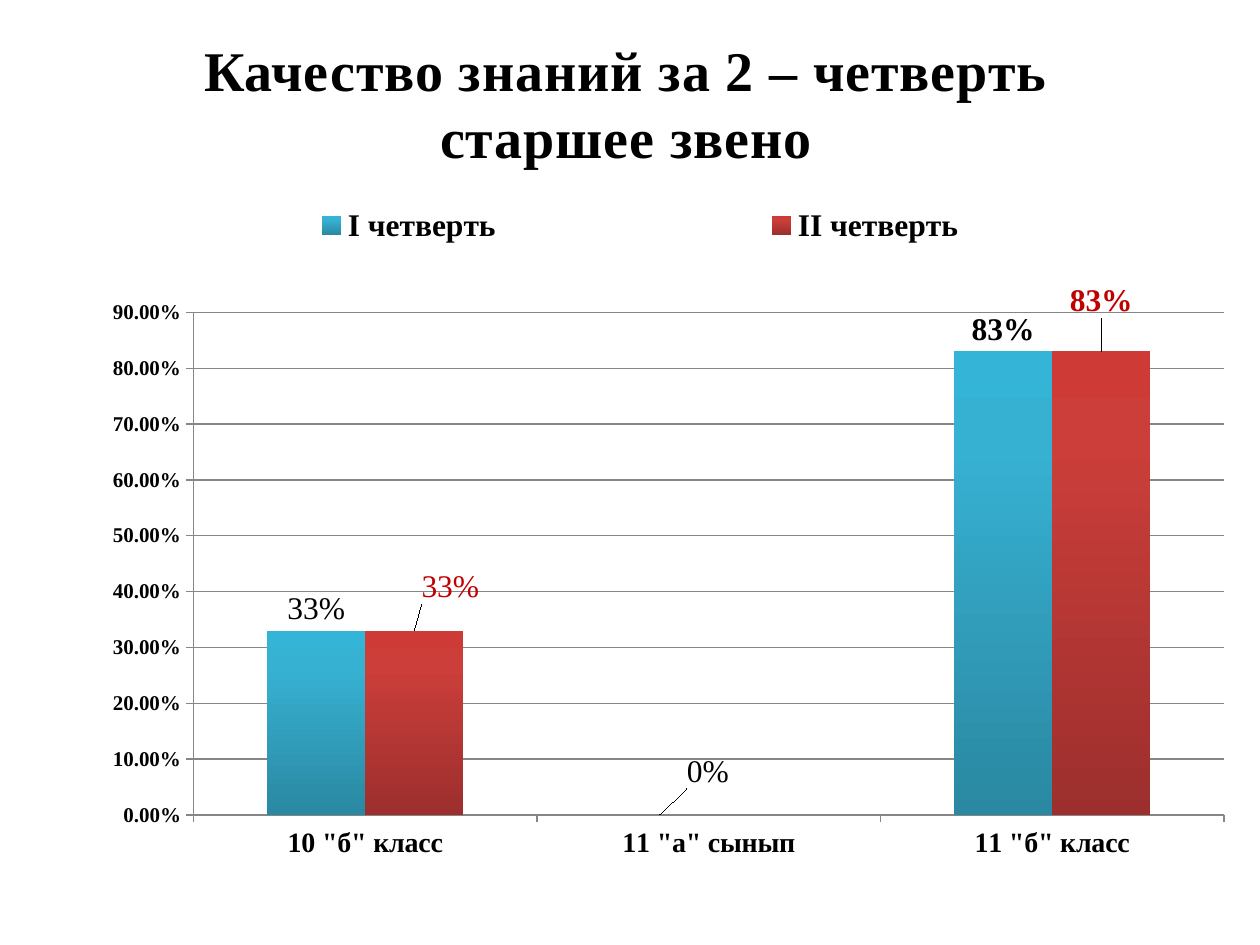
from copy import deepcopy
from dataclasses import dataclass

from pptx import Presentation
from pptx.chart.data import CategoryChartData
from pptx.dml.color import RGBColor
from pptx.enum import chart as ch, text
from pptx.oxml import parse_xml
from pptx.oxml.ns import nsdecls, qn
from pptx.util import Inches, Pt


@dataclass(frozen=True)
class Theme:
    font: str = "Times New Roman"
    ink: str = "000000"
    red: str = "C00000"
    grid: str = "868686"
    blues: tuple = ("2A88A2", "37B1D2", "34B4D6")
    reds: tuple = ("9C2F2D", "CB3E3A", "CE3B37")
    title: int = 32
    label: int = 18
    cat: int = 16
    val: int = 12


T = Theme()


def style(font, size, color=T.ink, bold=True):
    font.name, font.size, font.bold = T.font, Pt(size), bold
    font.color.rgb = RGBColor.from_string(color)


def layout(x, y, w=None, h=None, inner=False):
    """Manual layout: an offset for a label, a box when w and h are given."""
    parts = [("layoutTarget", "inner")] if inner else []
    if w:
        parts += [("xMode", "edge"), ("yMode", "edge")]
    parts += [("x", x), ("y", y)]
    if w:
        parts += [("w", w), ("h", h)]
    body = "".join(f'<c:{k} val="{v}"/>' for k, v in parts)
    return parse_xml(f'<c:layout {nsdecls("c")}><c:manualLayout>{body}'
                     "</c:manualLayout></c:layout>")


def put_layout(node, item, after=None):
    for old in node.findall(qn("c:layout")):
        node.remove(old)
    if after is None:
        node.insert(0, item)
    else:
        node.find(qn(after)).addnext(item)


def shade(fill, colors):
    """Three-stop gradient, darkest at the bottom."""
    fill.gradient()
    fill.gradient_angle = 90
    first = fill.gradient_stops[0]._gs
    first.addnext(deepcopy(first))
    for stop, pos, color in zip(fill.gradient_stops, (0, 0.8, 1), colors):
        stop.position = pos
        stop.color.rgb = RGBColor.from_string(color)


def add_title(slide, x, y, w, h):
    frame = slide.shapes.add_textbox(x, y, w, h).text_frame
    frame.word_wrap = True
    para = frame.paragraphs[0]
    para.text = "Качество знаний за 2 – четверть\vстаршее звено"
    para.alignment = text.PP_ALIGN.CENTER
    for run in para.runs:
        style(run.font, T.title)
        run._r.get_or_add_rPr().set("spc", "50")


def add_axes(chart):
    cat, val = chart.category_axis, chart.value_axis
    for axis, size in ((cat, T.cat), (val, T.val)):
        style(axis.tick_labels.font, size)
        axis.major_tick_mark = ch.XL_TICK_MARK.OUTSIDE
        axis.format.line.color.rgb = RGBColor.from_string(T.grid)
    val.minimum_scale, val.maximum_scale, val.major_unit = 0, 0.9, 0.1
    val.tick_labels.number_format = "0.00%"
    val.tick_labels.number_format_is_linked = False
    val.has_major_gridlines = True
    val.major_gridlines.format.line.color.rgb = RGBColor.from_string(T.grid)


def add_labels(series, color, spots):
    """Spots: point index -> (x shift, y shift, bold), or None to hide."""
    labels = series.data_labels
    labels.show_value = True
    labels.number_format, labels.number_format_is_linked = "0%", False
    labels.position = ch.XL_LABEL_POSITION.OUTSIDE_END
    style(labels.font, T.label, color)
    for i, spot in spots.items():
        label = series.points[i].data_label
        style(label.font, T.label, color, bool(spot and spot[2]))
        label.position = ch.XL_LABEL_POSITION.OUTSIDE_END
        node = next(d for d in labels._element.findall(qn("c:dLbl"))
                    if d.find(qn("c:idx")).get("val") == str(i))
        if spot:
            put_layout(node, layout(*spot[:2]), "c:idx")
        else:
            for part in list(node)[1:]:
                node.remove(part)
            node.append(parse_xml(f'<c:delete {nsdecls("c")} val="1"/>'))


def add_bars(slide, x, y, w, h):
    data = CategoryChartData(number_format="0%")
    data.categories = ['10 "б" класс', '11 "а" сынып', '11 "б" класс']
    for name in ("I четверть", "II четверть"):
        data.add_series(name, (0.33, 0, 0.83))
    chart = slide.shapes.add_chart(
        ch.XL_CHART_TYPE.COLUMN_CLUSTERED, x, y, w, h, data).chart
    chart.has_title = False
    style(chart.font, T.label, bold=False)

    # Plot and axes
    plot = chart.plots[0]
    plot.gap_width, plot.overlap, plot.vary_by_categories = 150, 0, False
    put_layout(chart._chartSpace.chart.plotArea,
               layout(0.144, 0.177, 0.856, 0.706, True))
    add_axes(chart)

    # Legend along the top
    chart.has_legend = True
    legend = chart.legend
    legend.position = ch.XL_LEGEND_POSITION.RIGHT
    legend.include_in_layout = False
    style(legend.font, T.label)
    put_layout(legend._element, layout(0.03, 0, 0.97, 0.11), "c:legendPos")

    # Columns and their labels
    looks = (
        (T.blues, T.ink, {0: (0, 0, False), 1: (0.04, -0.03, False)}),
        (T.reds, T.red, {0: (0.03, -0.03, False), 1: None,
                         2: (0, -0.04, True)}),
    )
    for series, (fills, color, spots) in zip(plot.series, looks):
        shade(series.format.fill, fills)
        add_labels(series, color, spots)


def main():
    deck = Presentation()
    deck.slide_width, deck.slide_height = Inches(10), Inches(7.5)
    slide = deck.slides.add_slide(deck.slide_layouts[6])
    add_title(slide, Inches(0.23), Inches(0.23), Inches(9.48), Inches(1.18))
    add_bars(slide, Inches(0.16), Inches(1.48), Inches(9.56), Inches(5.65))
    deck.save("out.pptx")


if __name__ == "__main__":
    main()
